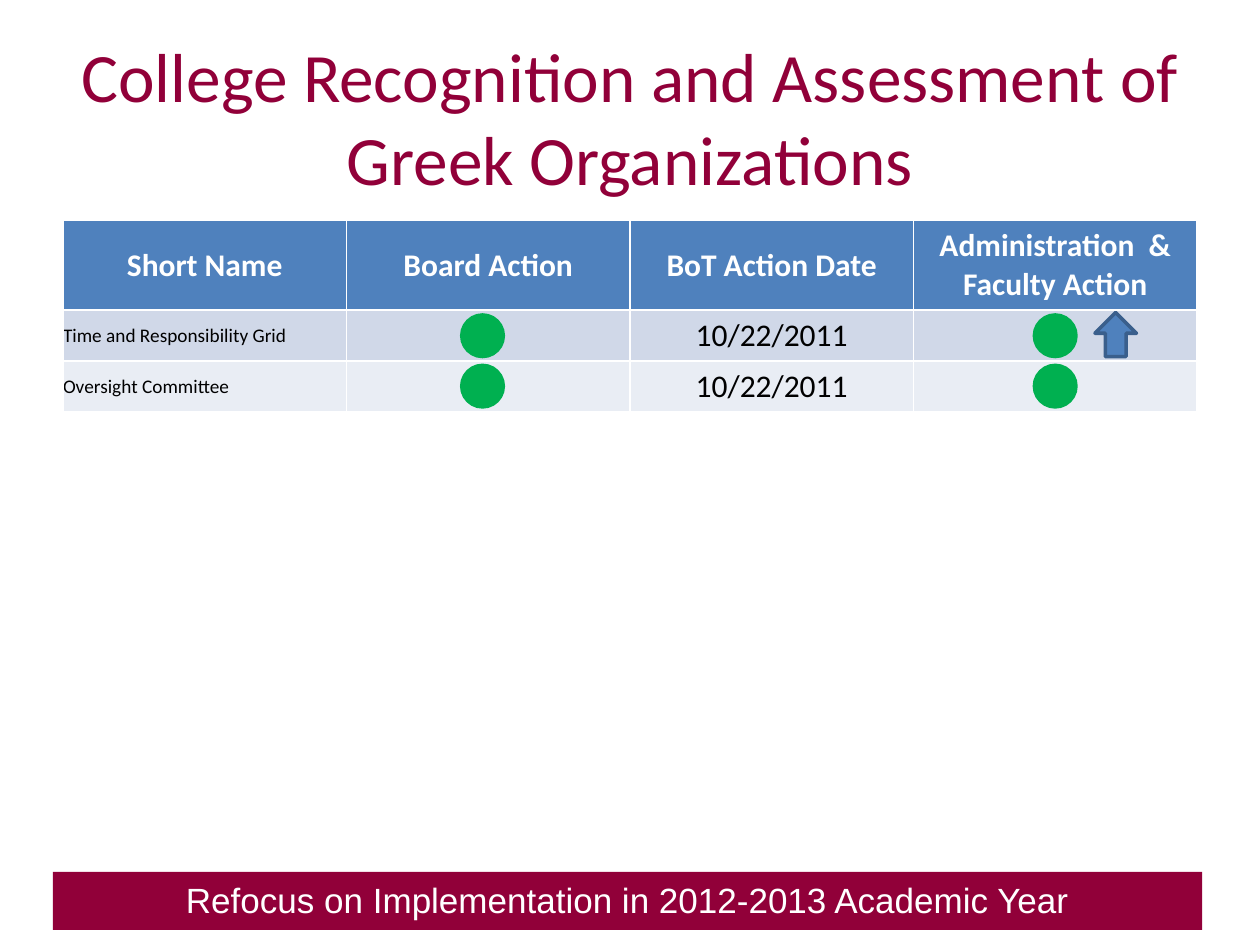
from pptx import Presentation
from pptx.dml.color import RGBColor
from pptx.enum.shapes import MSO_SHAPE
from pptx.enum.text import MSO_ANCHOR, PP_ALIGN
from pptx.util import Inches, Pt

OVAL, RECT, UP_ARROW = MSO_SHAPE.OVAL, MSO_SHAPE.RECTANGLE, MSO_SHAPE.UP_ARROW
MIDDLE, BOTTOM = MSO_ANCHOR.MIDDLE, MSO_ANCHOR.BOTTOM
LEFT, CENTER = PP_ALIGN.LEFT, PP_ALIGN.CENTER

COLORS = {
    "maroon": "910039", "blue": "4F81BD", "blue_edge": "3A5F8C",
    "green": "00B050", "band_dark": "D0D8E8", "band_light": "E9EDF4",
    "white": "FFFFFF", "black": "000000",
}
HEADERS = ["Short Name", "Board Action", "BoT Action Date",
           "Administration  & Faculty Action"]
ACTIONS = [["Time and Responsibility Grid", "", "10/22/2011", ""],
           ["Oversight Committee", "", "10/22/2011", ""]]
COLUMN_WIDTH = 2.25
HEADER_HEIGHT, ROW_HEIGHT = 0.7, 0.4
DOT_SIZE = 0.33


def rgb(name):
    return RGBColor.from_string(COLORS[name])


def write(frame, text, size, color, font="Calibri", bold=False, align=CENTER):
    frame.text = text
    paragraph = frame.paragraphs[0]
    paragraph.alignment = align
    for run in paragraph.runs:
        run.font.size = Pt(size)
        run.font.name = font
        run.font.bold = bold
        run.font.color.rgb = rgb(color)


def add_block(slide, kind, box, fill, edge=None):
    block = slide.shapes.add_shape(kind, *map(Inches, box))
    block.shadow.inherit = False
    block.fill.solid()
    block.fill.fore_color.rgb = rgb(fill)
    if edge:
        block.line.color.rgb = rgb(edge)
        block.line.width = Pt(2)
    else:
        block.line.fill.background()
    return block


def add_title(slide, box):
    title = slide.shapes.title
    title.left, title.top, title.width, title.height = map(Inches, box)
    title.text_frame.vertical_anchor = MIDDLE
    write(title.text_frame,
          "College Recognition and Assessment of Greek Organizations",
          39.6, "maroon")


def add_action_table(slide, box):
    grid = slide.shapes.add_table(len(ACTIONS) + 1, len(HEADERS),
                                  *map(Inches, box)).table
    for column in grid.columns:
        column.width = Inches(COLUMN_WIDTH)
    fills = ["blue", "band_dark", "band_light"]
    for r, texts in enumerate([HEADERS] + ACTIONS):
        grid.rows[r].height = Inches(ROW_HEIGHT if r else HEADER_HEIGHT)
        for c, text in enumerate(texts):
            cell = grid.cell(r, c)
            cell.fill.solid()
            cell.fill.fore_color.rgb = rgb(fills[r])
            cell.vertical_anchor = MIDDLE
            if r == 0:
                write(cell.text_frame, text, 18, "white", bold=True)
            elif c == 0:
                cell.margin_left = cell.margin_right = 0
                cell.margin_top = cell.margin_bottom = 0
                write(cell.text_frame, text, 11, "black", align=LEFT)
            elif text:
                write(cell.text_frame, text, 18, "black")


def add_status_marks(slide, box):
    left, top = box[:2]
    first_dot = top + HEADER_HEIGHT + 0.05
    # Green dots in the board and administration columns
    for column in (1.48, 3.5):
        for row in range(len(ACTIONS)):
            x = left + column * COLUMN_WIDTH - DOT_SIZE / 2
            add_block(slide, OVAL,
                      (x, first_dot + row * ROW_HEIGHT, DOT_SIZE, DOT_SIZE),
                      "green", "green")
    # Upward trend beside the first administration dot
    add_block(slide, UP_ARROW,
              (x + 0.48, first_dot - 0.02, DOT_SIZE, 0.35),
              "blue", "blue_edge")


def add_banner(slide, box):
    banner = add_block(slide, RECT, box, "maroon")
    frame = banner.text_frame
    frame.word_wrap = True
    frame.vertical_anchor = BOTTOM
    frame.margin_bottom = Inches(0.07)
    write(frame, "Refocus on Implementation in 2012-2013 Academic Year",
          20, "white", font="Arial")


def main():
    deck = Presentation()
    deck.slide_width, deck.slide_height = Inches(10), Inches(7.5)
    slide = deck.slides.add_slide(deck.slide_layouts[5])
    table_box = (0.5, 1.75, 4 * COLUMN_WIDTH,
                 HEADER_HEIGHT + len(ACTIONS) * ROW_HEIGHT)
    add_title(slide, (0.5, 0.3, 9, 1.25))
    add_action_table(slide, table_box)
    add_status_marks(slide, table_box)
    add_banner(slide, (0.42, 6.92, 9.12, 0.46))
    deck.save("out.pptx")


if __name__ == "__main__":
    main()
